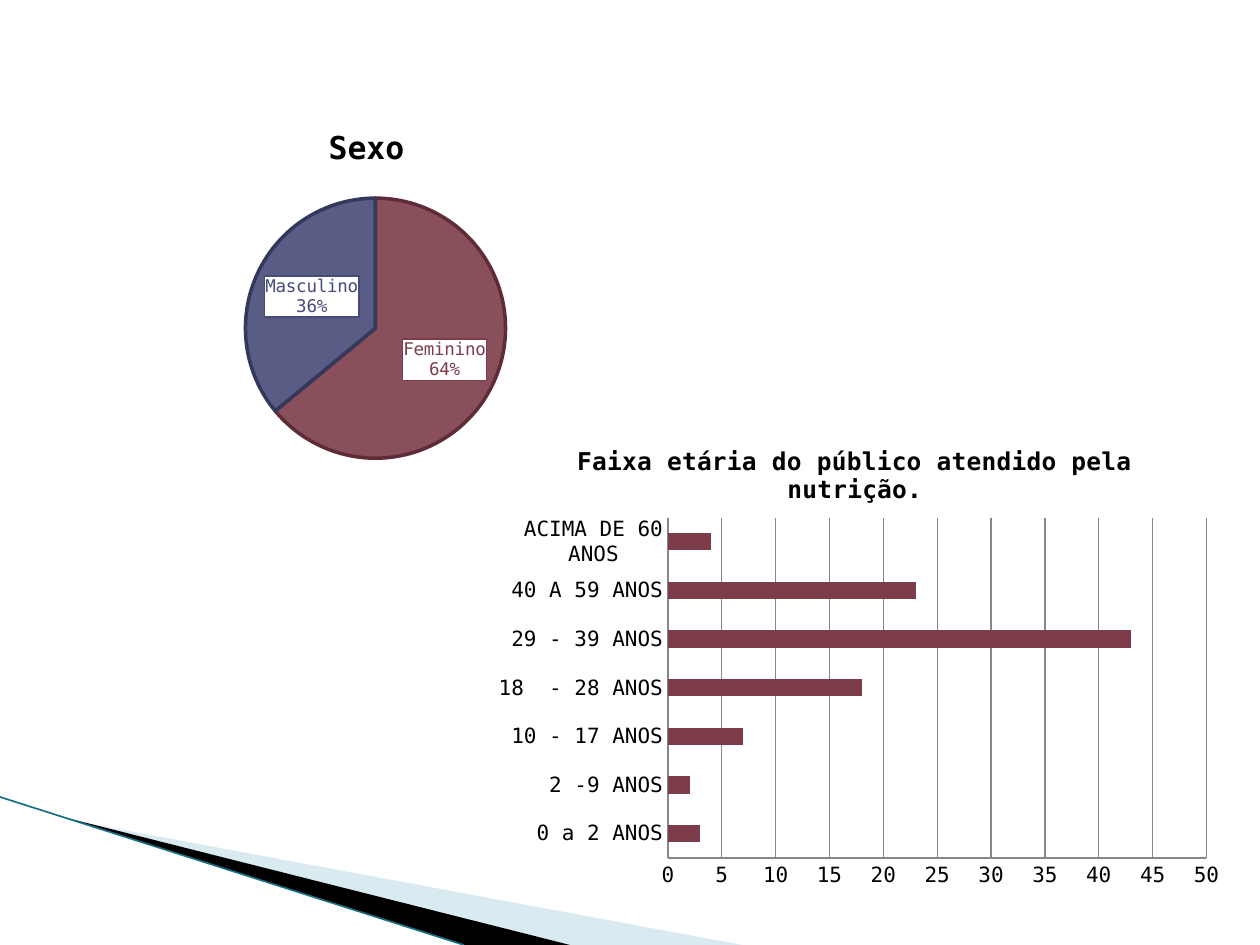
"""Build a slide with a pie chart, a bar chart and a corner ornament."""
from lxml import etree
from pptx import Presentation
from pptx.chart.data import CategoryChartData
from pptx.dml.color import RGBColor
from pptx.enum.chart import XL_CHART_TYPE, XL_LABEL_POSITION, XL_TICK_MARK
from pptx.enum.shapes import MSO_CONNECTOR
from pptx.oxml import parse_xml
from pptx.oxml.ns import nsdecls, qn
from pptx.util import Pt

PIE, BAR = XL_CHART_TYPE.PIE, XL_CHART_TYPE.BAR_CLUSTERED
INSIDE_END = XL_LABEL_POSITION.INSIDE_END
NO_TICK = XL_TICK_MARK.NONE
STRAIGHT = MSO_CONNECTOR.STRAIGHT
PX = 914400 / 126
FONT = "DejaVu Sans Mono"
COLORS = {
    "wine": "7D3C4A", "wine_edge": "5E2B37",
    "indigo": "474B78", "indigo_edge": "34385A",
    "black": "000000", "white": "FFFFFF", "grid": "868686",
    "pale_blue": "A0CBDC", "teal": "1B6F83",
}
SEX = {"Feminino": 64, "Masculino": 36}
AGES = {
    "0 a 2 ANOS": 3, "2 -9 ANOS": 2, "10 - 17 ANOS": 7,
    "18  - 28 ANOS": 18, "29 - 39 ANOS": 43, "40 A 59 ANOS": 23,
    "ACIMA DE 60 ANOS": 4,
}


def px(n):
    """Turn pixels into EMU."""
    return round(n * PX)


def rgb(name):
    """Look up a colour by name."""
    return RGBColor.from_string(COLORS[name])


def set_fill(fill, name, alpha=100):
    """Apply a solid fill with an opacity in percent."""
    fill.solid()
    fill.fore_color.rgb = rgb(name)
    if alpha < 100:
        clr = fill._xPr.find(".//" + qn("a:srgbClr"))
        etree.SubElement(clr, qn("a:alpha")).set("val", str(alpha * 1000))


def set_line(line, name, width):
    """Apply a line colour and a width in points."""
    line.color.rgb = rgb(name)
    line.width = Pt(width)


def set_font(font, size, color="black", bold=False):
    """Apply the slide's typeface to a font."""
    font.name, font.size, font.bold = FONT, Pt(size), bold
    font.color.rgb = rgb(color)


def add_chart(s, kind, box, values, title, title_size, size, layout):
    """Add a titled one-series chart with a fixed inner plot area."""
    data = CategoryChartData(number_format="0")
    data.categories = list(values)
    data.add_series("Series 1", list(values.values()))
    chart = s.shapes.add_chart(kind, *map(px, box), data).chart
    set_font(chart.font, size)
    chart.has_legend = False
    tf = chart.chart_title.text_frame
    tf.text = title
    set_font(tf.paragraphs[0].font, title_size, bold=True)
    area = chart._chartSpace.chart.plotArea
    for old in area.findall(qn("c:layout")):
        area.remove(old)
    sizes = "".join(f'<c:{k} val="{v}"/>' for k, v in zip("xywh", layout))
    area.insert(0, parse_xml(
        f'<c:layout {nsdecls("c")}><c:manualLayout>'
        '<c:layoutTarget val="inner"/><c:xMode val="edge"/>'
        f'<c:yMode val="edge"/>{sizes}</c:manualLayout></c:layout>'))
    return chart


def label_slice(point, color):
    """Give a slice a boxed label with its category and percentage."""
    label = point.data_label
    set_font(label.font, 10, color)
    label.position = INSIDE_END
    d = label._dLbl
    for tag, shown in (("Val", 0), ("CatName", 1), ("Percent", 1)):
        d.find(qn(f"c:show{tag}")).set("val", str(shown))
    d.find(qn("c:txPr")).addprevious(parse_xml(
        f'<c:spPr {nsdecls("c", "a")}><a:solidFill>'
        f'<a:srgbClr val="{COLORS["white"]}"/></a:solidFill>'
        f'<a:ln w="12700"><a:solidFill><a:srgbClr val="{COLORS[color]}"/>'
        '</a:solidFill></a:ln></c:spPr>'))
    etree.SubElement(d, qn("c:separator")).text = "\n"


def add_sex_pie(s, box):
    """Draw the pie chart of patients by sex."""
    chart = add_chart(s, PIE, box, SEX, "Sexo", 18, 10,
                      (0.3, 0.23, 0.43, 0.66))
    series = chart.plots[0].series[0]
    for i, color in enumerate(("wine", "indigo")):
        point = series.points[i]
        set_fill(point.format.fill, color, 90)
        set_line(point.format.line, color + "_edge", 2)
        label_slice(point, color)


def add_age_bars(s, box):
    """Draw the bar chart of patients by age group."""
    chart = add_chart(s, BAR, box, AGES,
                      "Faixa etária do público atendido pela nutrição.",
                      14, 12, (0.25, 0.2, 0.72, 0.72))
    plot = chart.plots[0]
    plot.gap_width = 182
    plot.vary_by_categories = False
    set_fill(plot.series[0].format.fill, "wine")
    for axis in (chart.category_axis, chart.value_axis):
        axis.major_tick_mark = axis.minor_tick_mark = NO_TICK
        set_line(axis.format.line, "grid", 0.75)
        set_font(axis.tick_labels.font, 12)
    axis = chart.value_axis
    axis.minimum_scale, axis.maximum_scale, axis.major_unit = 0, 50, 5
    axis.has_major_gridlines = True
    set_line(axis.major_gridlines.format.line, "grid", 0.75)


def add_corner(s, box):
    """Draw the two wedges and the edge line in the bottom corner."""
    x, y, w, h = box
    wedges = (
        ("pale_blue", 40, ((69, 23), (w, h), (570, h))),
        ("black", 100, ((67, 21), (570, h), (464, h))),
    )
    for color, alpha, points in wedges:
        start, *rest = [(x + a, y + b) for a, b in points]
        builder = s.shapes.build_freeform(*start, scale=PX)
        builder.add_line_segments(rest)
        sp = builder.convert_to_shape()
        sp.shadow.inherit = False
        set_fill(sp.fill, color, alpha)
        sp.line.fill.background()
    edge = s.shapes.add_connector(
        STRAIGHT, px(x), px(y), px(x + 464), px(y + h))
    set_line(edge.line, "teal", 0.95)
    etree.SubElement(edge._element.spPr, qn("a:effectLst"))


def main():
    """Build and save the slide."""
    prs = Presentation()
    prs.slide_width, prs.slide_height = px(1260), px(945)
    s = prs.slides.add_slide(prs.slide_layouts[6])
    add_corner(s, (0, 797, 742, 148))
    add_sex_pie(s, (64, 106, 605, 397))
    add_age_bars(s, (481, 423, 748, 473))
    prs.save("out.pptx")


if __name__ == "__main__":
    main()
